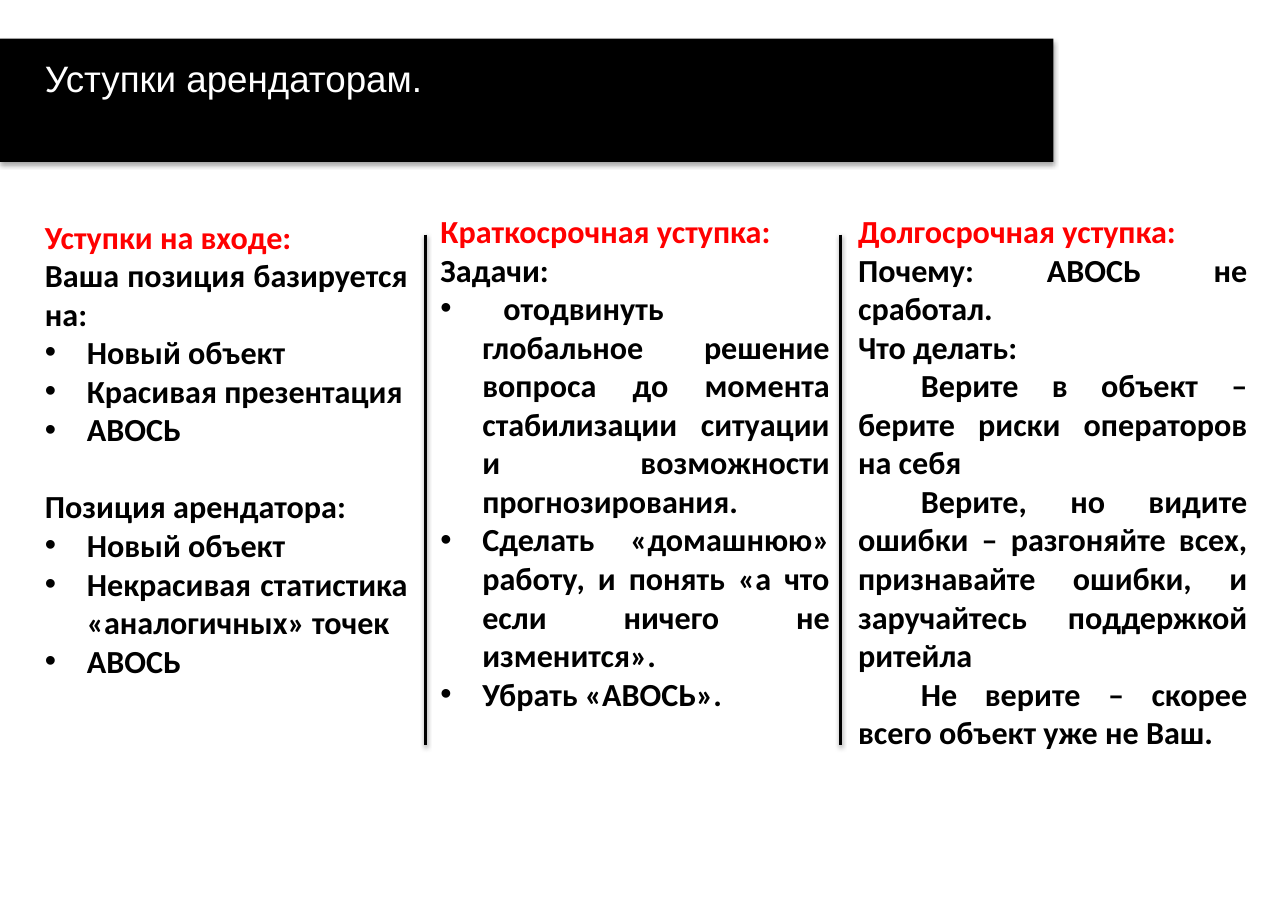
from dataclasses import dataclass

from lxml.etree import SubElement as Sub
from pptx import Presentation
from pptx.dml.color import RGBColor as RGB
from pptx.enum.shapes import MSO_CONNECTOR as Link, MSO_SHAPE as Form
from pptx.enum.text import MSO_AUTO_SIZE as Auto, PP_ALIGN as Align
from pptx.oxml.ns import qn
from pptx.util import Inches, Pt


@dataclass(frozen=True)
class Theme:
    black: str = "000000"
    white: str = "FFFFFF"
    red: str = "FF0000"
    title: float = 24
    body: float = 21
    head: str = "Arial"
    text: str = "Calibri"


THEME = Theme()
WIDE, HIGH = Inches(11.69), Inches(8.27)
HANG, TAB = Inches(0.38), Inches(0.57)

# Each paragraph is (style, text).
ENTRY = [
    ("head", "Уступки на входе:"),
    ("plain", "Ваша позиция базируется на:"),
    ("list", "Новый объект"),
    ("list", "Красивая презентация"),
    ("list", "АВОСЬ"),
    ("apart", "Позиция арендатора:"),
    ("list", "Новый объект"),
    ("list", "Некрасивая статистика «аналогичных» точек"),
    ("list", "АВОСЬ"),
]
SHORT = [
    ("head", "Краткосрочная уступка:"),
    ("plain", "Задачи:"),
    ("list", "\tотодвинуть глобальное решение вопроса до момента "
             "стабилизации ситуации и возможности прогнозирования."),
    ("list", "Сделать «домашнюю» работу, и понять "
             "«а что если ничего не изменится»."),
    ("list", "Убрать «АВОСЬ»."),
]
LONG = [
    ("head", "Долгосрочная уступка:"),
    ("plain", "Почему: АВОСЬ не сработал."),
    ("plain", "Что делать:"),
    ("plain", "\tВерите в объект – берите риски операторов на себя"),
    ("plain", "\tВерите, но видите ошибки – разгоняйте всех, "
              "признавайте ошибки, и заручайтесь поддержкой ритейла"),
    ("plain", "\tНе верите – скорее всего объект уже не Ваш."),
]
STYLES = {
    "head": {"color": THEME.red},
    "plain": {},
    "list": {"bullet": True},
    "apart": {"gap": 25.2},
}


def area(left, top, width, height):
    """Turn percent of the slide's size into lengths."""
    return [round(part * side / 100) for part, side in
            zip((left, top, width, height), (WIDE, HIGH, WIDE, HIGH))]


def shade(shape, alpha, dist):
    """Give the shape a soft shadow that falls straight down."""
    shape_pr = shape._element.spPr
    drop = Sub(Sub(shape_pr, qn("a:effectLst")), qn("a:outerShdw"),
               blurRad=str(Pt(3.1)), dist=str(Pt(dist)), dir="5400000",
               rotWithShape="0")
    tint = Sub(drop, qn("a:srgbClr"), val=THEME.black)
    Sub(tint, qn("a:alpha"), val=str(alpha * 1000))


def write(para, text, size=THEME.body, face=THEME.text, color=THEME.black,
          bold=True, align=Align.JUSTIFY, bullet=False, gap=0):
    props = para._p.get_or_add_pPr()
    if bullet:
        props.set("marL", str(HANG))
        props.set("indent", str(-HANG))
        Sub(props, qn("a:buFont"), typeface=THEME.head)
        Sub(props, qn("a:buChar"), char="•")
    if text.startswith("\t"):
        Sub(Sub(props, qn("a:tabLst")), qn("a:tab"), pos=str(TAB), algn="l")
    para.alignment = align
    if gap:
        para.space_before = Pt(gap)
    run = para.add_run()
    run.text = text
    font = run.font
    font.size, font.name, font.bold = Pt(size), face, bold
    font.color.rgb = RGB.from_string(color)


def frame(slide, *place):
    box = slide.shapes.add_textbox(*area(*place)).text_frame
    box.word_wrap = True
    box.auto_size = Auto.SHAPE_TO_FIT_TEXT
    return box


def banner(slide, text):
    bar = slide.shapes.add_shape(Form.RECTANGLE, *area(0, 4.23, 81.78, 13.54))
    bar.fill.solid()
    bar.fill.fore_color.rgb = RGB.from_string(THEME.black)
    bar.line.fill.background()
    shade(bar, 35, 1.8)
    title = frame(slide, 2.65, 5.5, 76.05, 6.05)
    write(title.paragraphs[0], text, size=THEME.title, face=THEME.head,
          color=THEME.white, bold=False, align=Align.LEFT)


def column(slide, items, *place):
    box = frame(slide, *place)
    for index, (style, text) in enumerate(items):
        para = box.add_paragraph() if index else box.paragraphs[0]
        write(para, text, **STYLES[style])


def rule(slide, left):
    x, top, _, end = area(left, 25.76, 0, 81.74)
    line = slide.shapes.add_connector(Link.STRAIGHT, x, top, x, end)
    line.line.color.rgb = RGB.from_string(THEME.black)
    line.line.width = Pt(2)
    shade(line, 38, 1.6)


def main():
    deck = Presentation()
    deck.slide_width, deck.slide_height = WIDE, HIGH
    slide = deck.slides.add_slide(deck.slide_layouts[6])
    banner(slide, "Уступки арендаторам.")
    column(slide, ENTRY, 2.65, 23.22, 29.85, 56.83)
    for items, left in ((SHORT, 33.36), (LONG, 65.78)):
        column(slide, items, left, 22.61, 31.91, 69.65)
    for left in (33.02, 65.27):
        rule(slide, left)
    deck.save("out.pptx")


if __name__ == "__main__":
    main()
